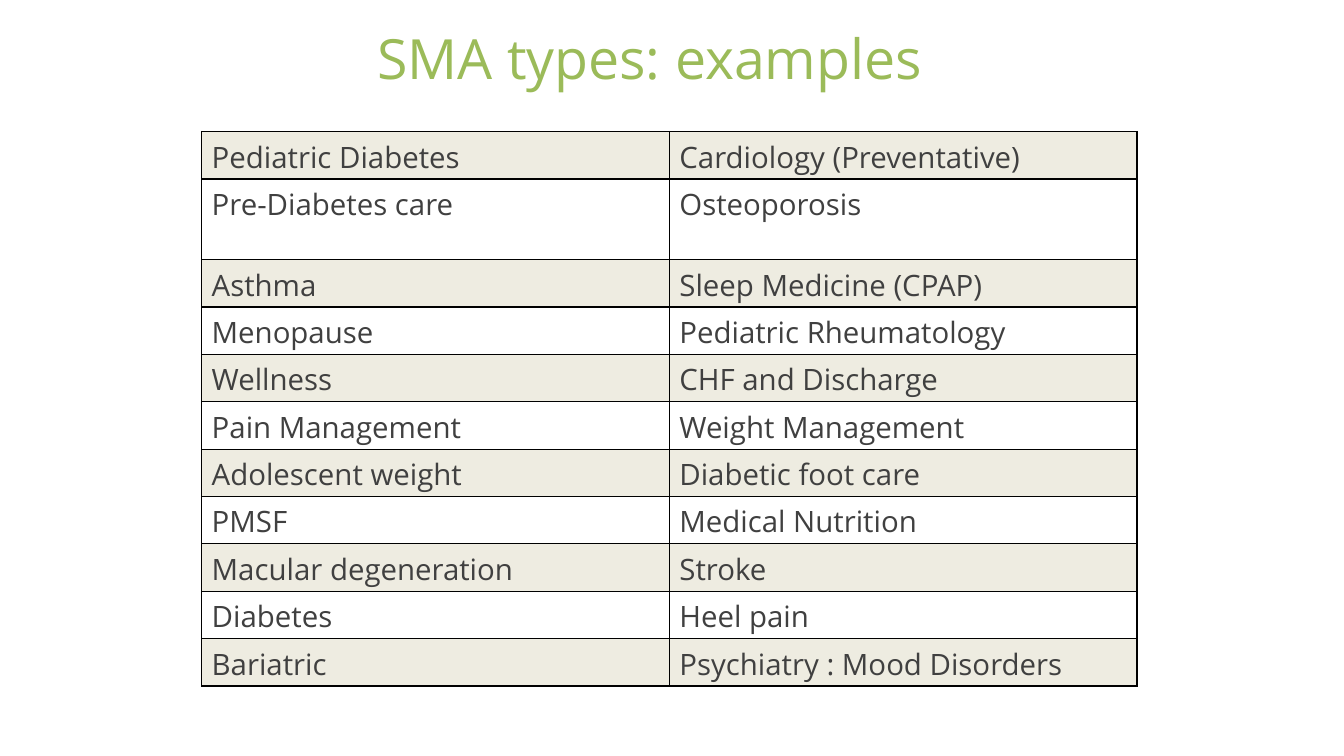
from dataclasses import dataclass

from lxml import etree
from pptx import Presentation
from pptx import util as u
from pptx.dml.color import RGBColor
from pptx.enum import text
from pptx.oxml import ns


@dataclass
class Theme:
    """Colours, font and type sizes of the slide."""
    title: str = "9BBB59"
    body: str = "404040"
    band: str = "EEECE1"
    border: str = "000000"
    font: str = "Open Sans"
    title_size: float = 39.6
    body_size: float = 21
    border_width: float = 1


class SlideBuilder:
    """Draws styled elements on a grid of 100 columns and 100 rows."""

    def __init__(self, prs, theme):
        """Add a blank slide and measure its grid."""
        self.theme = theme
        self.s = prs.slides.add_slide(prs.slide_layouts[6])
        self.col = prs.slide_width / 100
        self.row = prs.slide_height / 100

    def box(self, left, top, width, height):
        """Turn grid columns and rows into slide lengths."""
        return (u.Emu(round(left * self.col)), u.Emu(round(top * self.row)),
                u.Emu(round(width * self.col)), u.Emu(round(height * self.row)))

    def add_words(self, tf, words, size, color, align):
        """Put one styled run into a text frame."""
        p = tf.paragraphs[0]
        p.alignment = align
        r = p.add_run()
        r.text = words
        for name, value in {"name": self.theme.font, "size": u.Pt(size), "bold": False}.items():
            setattr(r.font, name, value)
        r.font.color.rgb = RGBColor.from_string(color)

    def title(self, words, at):
        """Add the centred heading, raised by its bottom margin."""
        tf = self.s.shapes.add_textbox(*self.box(*at)).text_frame
        frame = {
            "word_wrap": True,
            "vertical_anchor": text.MSO_ANCHOR.MIDDLE,
            "margin_left": u.Inches(0.07),
            "margin_right": u.Inches(0.07),
            "margin_top": u.Inches(0.04),
            "margin_bottom": u.Inches(0.57),
        }
        for name, value in frame.items():
            setattr(tf, name, value)
        self.add_words(tf, words, self.theme.title_size, self.theme.title, text.PP_ALIGN.CENTER)

    def borders(self, cell):
        """Rule all four sides of a cell."""
        tc_pr = cell._tc.get_or_add_tcPr()
        for side in ("a:lnL", "a:lnR", "a:lnT", "a:lnB"):
            line = etree.SubElement(tc_pr, ns.qn(side), w=str(u.Pt(self.theme.border_width)))
            fill = etree.SubElement(line, ns.qn("a:solidFill"))
            etree.SubElement(fill, ns.qn("a:srgbClr"), val=self.theme.border)

    def table(self, rows, left, top, width, heights):
        """Add a ruled table with every other row shaded."""
        at = self.box(left, top, width, sum(heights))
        table = self.s.shapes.add_table(len(rows), len(rows[0]), *at).table
        for name in ("first_row", "horz_banding"):
            setattr(table, name, False)
        for i, (words_in_row, height) in enumerate(zip(rows, heights)):
            table.rows[i].height = u.Emu(round(height * self.row))
            for j, words in enumerate(words_in_row):
                cell = table.cell(i, j)
                self.borders(cell)
                if i % 2 == 0:
                    cell.fill.solid()
                    cell.fill.fore_color.rgb = RGBColor.from_string(self.theme.band)
                else:
                    cell.fill.background()
                self.add_words(cell.text_frame, words, self.theme.body_size,
                               self.theme.body, text.PP_ALIGN.LEFT)


SMA_TYPES = [
    ("Pediatric Diabetes", "Cardiology (Preventative)"),
    ("Pre-Diabetes care", "Osteoporosis"),
    ("Asthma", "Sleep Medicine (CPAP)"),
    ("Menopause", "Pediatric Rheumatology"),
    ("Wellness", "CHF and Discharge"),
    ("Pain Management", "Weight Management"),
    ("Adolescent weight", "Diabetic foot care"),
    ("PMSF", "Medical Nutrition"),
    ("Macular degeneration", "Stroke"),
    ("Diabetes", "Heel pain"),
    ("Bariatric", "Psychiatry : Mood Disorders"),
]


def main():
    """Build and save the slide."""
    prs = Presentation()
    prs.slide_width, prs.slide_height = u.Inches(13.33), u.Inches(7.5)
    slide = SlideBuilder(prs, Theme())
    slide.title("SMA types: examples", (15.83, 5.6, 65.04, 11.07))
    heights = [6.27] * len(SMA_TYPES)
    heights[1] = 10.67
    slide.table(SMA_TYPES, 15, 17.4, 69.6, heights)
    prs.save("out.pptx")


if __name__ == "__main__":
    main()
